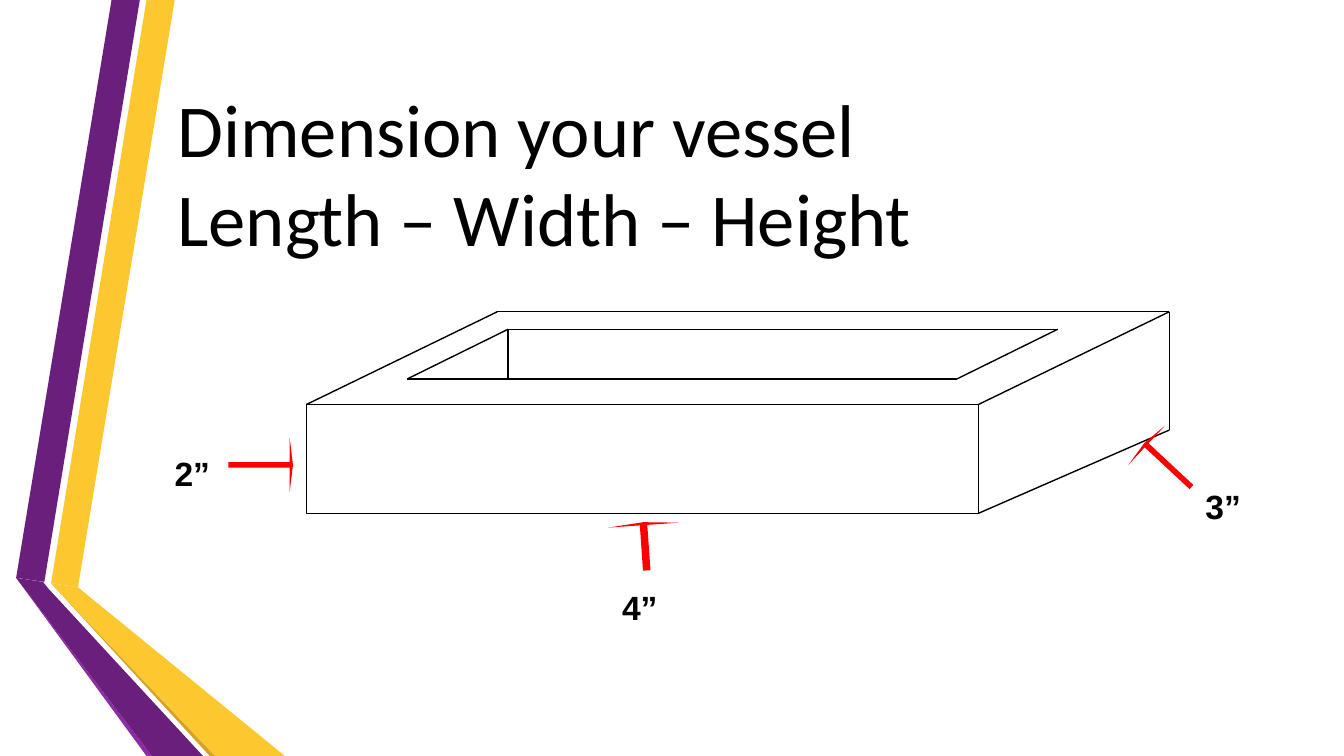
import pptx
import pptx.util
import pptx.dml.color
import pptx.enum.shapes
import pptx.enum.text
import pptx.oxml

SHAPE = pptx.enum.shapes.MSO_SHAPE
ANCHOR = pptx.enum.text.MSO_ANCHOR
CELL = pptx.util.Inches(0.1)
COLS, ROWS = 100, 56.25  # the grid that covers the slide


def grid(*counts):
    return [round(n * CELL) for n in counts]


def tint(code):
    return pptx.dml.color.RGBColor.from_string(code)


def write(frame, text, size=18, font="Arial", color="000000",
          bold=False, anchor=ANCHOR.TOP, wrap=True):
    frame.word_wrap = wrap
    frame.auto_size = pptx.enum.text.MSO_AUTO_SIZE.NONE
    frame.vertical_anchor = anchor
    para = frame.paragraphs[0]
    para.text = text
    para.alignment = pptx.enum.text.PP_ALIGN.LEFT
    for run in para.runs:
        run.font.size = pptx.util.Pt(size)
        run.font.name = font
        run.font.bold = bold
        run.font.color.rgb = tint(color)


class Deck:
    ink, red = "000000", "FF0000"
    purple, violet = "6B1F7C", "8D2BA5"
    gold, ochre = "FDC82F", "D3A229"
    thin = pptx.util.Pt(0.75)

    def __init__(self):
        self.file = pptx.Presentation()
        self.file.slide_width, self.file.slide_height = grid(COLS, ROWS)
        self.slide = self.file.slides.add_slide(self.file.slide_layouts[5])
        self.shapes = self.slide.shapes

    def title(self, text, *box):
        head = self.shapes.title
        head.left, head.top, head.width, head.height = grid(*box)
        write(head.text_frame, text, size=40, font="Calibri",
              color=self.ink, anchor=ANCHOR.MIDDLE)

    def band(self, color, *points):
        # Points are turned into whole lengths before they are drawn
        first, *rest = [grid(*point) for point in points]
        pen = self.shapes.build_freeform(*first)
        pen.add_line_segments(rest, close=True)
        self.paint(pen.convert_to_shape(), color)

    def paint(self, shape, color):
        shape.shadow.inherit = False
        shape.fill.solid()
        shape.fill.fore_color.rgb = tint(color)
        shape.line.fill.background()

    def frame(self, *box):
        rect = self.shapes.add_shape(SHAPE.RECTANGLE, *grid(*box))
        rect.shadow.inherit = False
        rect.fill.background()
        rect.line.color.rgb = tint(self.ink)
        rect.line.width = self.thin

    def edge(self, start, end):
        kind = pptx.enum.shapes.MSO_CONNECTOR.STRAIGHT
        line = self.shapes.add_connector(kind, *grid(*start, *end))
        line.line.color.rgb = tint(self.ink)
        line.line.width = self.thin
        props = line._element.spPr
        props.append(pptx.oxml.parse_xml(
            '<a:effectLst xmlns:a="http://schemas.openxmlformats.org/drawingml/2006/main"/>'))

    def arrow(self, box, turn):
        mark = self.shapes.add_shape(SHAPE.RIGHT_ARROW, *grid(*box))
        mark.adjustments[0], mark.adjustments[1] = 0.105, 0.061
        mark.rotation = turn
        self.paint(mark, self.red)

    def label(self, text, left, top):
        box = self.shapes.add_textbox(*grid(left, top, 5.8, 3))
        write(box.text_frame, text, color=self.ink, bold=True)


def main():
    deck = Deck()

    # Folded ribbons on the left
    deck.band(deck.gold, (3.8, 43.4), (5.8, 43.7), (13, 0), (10.9, 0))
    deck.band(deck.purple, (10.4, 0), (8.3, 0), (1.2, 43), (3.3, 43.3))
    deck.band(deck.violet, (1.2, 43), (10.9, ROWS), (11.3, ROWS))
    deck.band(deck.ochre, (3.8, 43.4), (15.6, ROWS), (16, ROWS))
    deck.band(deck.gold, (3.8, 43.4), (16, ROWS), (21.2, ROWS), (5.8, 43.7))
    deck.band(deck.purple, (15.1, ROWS), (3.6, 43.8), (3.2, 43.3),
              (1.2, 43), (11.3, ROWS))

    deck.title("Dimension your vessel\nLength – Width – Height",
               12.2, 5.6, 82.2, 14.4)

    # Vessel: front face, outer rim and side
    left, right, top, base = 22.8, 72.8, 30.1, 38.2
    deck.frame(left, top, right - left, base - top)
    shift, back = 14.2, 23.2
    rear, corner = (left + shift, back), (right + shift, back)
    low = (right + shift, 32)
    for start, end in [((left, top), rear), ((right, top), corner),
                       (rear, corner), (corner, low), ((right, base), low)]:
        deck.edge(start, end)

    # Vessel: opening
    far, near = 24.5, 28.2
    inner, outer = (37.8, far), (78.7, far)
    front, side = (30.3, near), (71.2, near)
    for start, end in [(outer, side), (inner, front), (inner, outer),
                       (front, side), (inner, (37.8, near))]:
        deck.edge(start, end)

    # Dimensions: arrow, turn, text and its place
    for box, turn, text, spot in [
            ((17, 32.6, 4.8, 4), 0, "2”", (12, 33.2)),
            ((46.2, 38, 3.6, 5.3), 266, "4”", (45.3, 43.2)),
            ((84.5, 32.6, 4.8, 4), 223, "3”", (88.7, 35.7))]:
        deck.arrow(box, turn)
        deck.label(text, *spot)

    deck.file.save("out.pptx")


if __name__ == "__main__":
    main()
